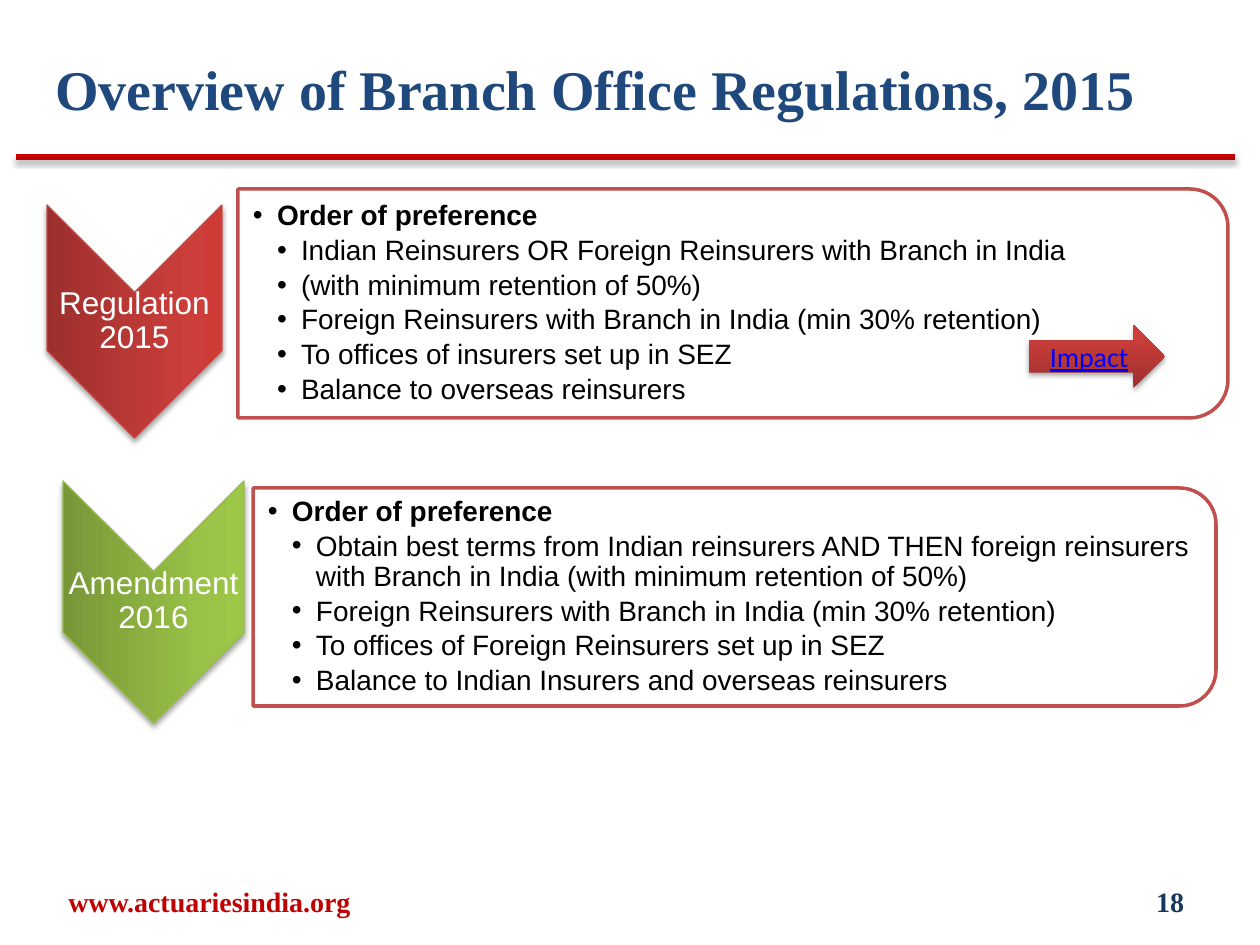
import copy

import pptx
import pptx.util
from lxml import etree
from pptx.dml.color import RGBColor
from pptx.enum.shapes import MSO_CONNECTOR, MSO_SHAPE
from pptx.enum.text import MSO_ANCHOR, PP_ALIGN
from pptx.oxml.ns import qn

PX = 914400 // 126
COLORS = {
    "title": "1F497D", "accent": "C00000", "number": "17375E",
    "panel_line": "C0504D", "white": "FFFFFF", "black": "000000", "link": "0000FF",
}
RED = ("9C2F2D", "CB3E3A", "CE3B37")
GREEN = ("779737", "9BC348", "9DC746")
STOPS = (0, 0.8, 1)

TITLE = "Overview of Branch Office Regulations, 2015"
HEADING = "Order of preference"
# Boxes are left, top, width, height in px as seen after rotation.
SECTIONS = [
    {
        "label": "Regulation 2015", "gradient": RED, "edge": "BF4C48",
        "chevron": (47, 205, 175, 233), "panel": (238, 189, 990, 229),
        "items": [
            "Indian Reinsurers OR Foreign Reinsurers with Branch in India",
            "(with minimum retention of 50%)",
            "Foreign Reinsurers with Branch in India (min 30% retention)",
            "To offices of insurers set up in SEZ",
            "Balance to overseas reinsurers",
        ],
    },
    {
        "label": "Amendment 2016", "gradient": GREEN, "edge": "98B955",
        "chevron": (63, 481, 181, 242), "panel": (253, 488, 963, 218),
        "items": [
            "Obtain best terms from Indian reinsurers AND THEN foreign reinsurers "
            "with Branch in India (with minimum retention of 50%)",
            "Foreign Reinsurers with Branch in India (min 30% retention)",
            "To offices of Foreign Reinsurers set up in SEZ",
            "Balance to Indian Insurers and overseas reinsurers",
        ],
    },
]
FOOTERS = [
    ("www.actuariesindia.org", (10, 876, 399, 50), "accent", PP_ALIGN.CENTER),
    ("18", (903, 876, 294, 50), "number", PP_ALIGN.RIGHT),
]
PANEL_INSET = 11
BULLET_INDENT = 24


def emu(box):
    return [value * PX for value in box]


def rgb(name):
    return RGBColor.from_string(COLORS.get(name, name))


def write(paragraph, text, *, size, font, color, bold=False, underline=False,
          align=PP_ALIGN.LEFT, line_spacing=None, space_after=0, level=0):
    """Fill a paragraph; a level above 0 gives it a hanging bullet."""
    if level:
        properties = paragraph._p.get_or_add_pPr()
        properties.set("marL", str(level * BULLET_INDENT * PX))
        properties.set("indent", str(-BULLET_INDENT * PX))
        etree.SubElement(properties, qn("a:buFont"), typeface="Arial")
        etree.SubElement(properties, qn("a:buChar"), char="•")
        paragraph.level = level - 1
    paragraph.alignment = align
    paragraph.line_spacing = line_spacing
    paragraph.space_before = pptx.util.Pt(0)
    paragraph.space_after = pptx.util.Pt(space_after)
    run = paragraph.add_run()
    run.text = text
    run.font.size = pptx.util.Pt(size)
    run.font.name = font
    run.font.bold = bold
    run.font.underline = underline
    run.font.color.rgb = rgb(color)


def set_frame(shape, anchor=MSO_ANCHOR.MIDDLE, insets=(13, 6, 13, 6)):
    frame = shape.text_frame
    frame.word_wrap = True
    frame.vertical_anchor = anchor
    (frame.margin_left, frame.margin_top,
     frame.margin_right, frame.margin_bottom) = emu(insets)
    return frame


def add_shadow(shape, alpha):
    effects = etree.SubElement(shape._element.spPr, qn("a:effectLst"))
    shadow = etree.SubElement(effects, qn("a:outerShdw"), blurRad="39370",
                              dist="22860", dir="5400000", rotWithShape="0")
    color = etree.SubElement(shadow, qn("a:srgbClr"), val=COLORS["black"])
    etree.SubElement(color, qn("a:alpha"), val=str(alpha * 1000))


def fill_gradient(shape, colors):
    shape.fill.gradient()
    shape.fill.gradient_angle = 90
    stops = shape._element.spPr.find(".//" + qn("a:gsLst"))
    stops.insert(1, copy.deepcopy(stops[0]))
    for stop, position, color in zip(shape.fill.gradient_stops, STOPS, colors):
        stop.position = position
        stop.color.rgb = rgb(color)


def add_turned(shapes, kind, box, color, width):
    """Add a preset turned by 90 degrees so that it covers the box."""
    left, top, seen_width, seen_height = box
    shift = (seen_width - seen_height) / 2
    frame = (left + shift, top - shift, seen_height, seen_width)
    shape = shapes.add_shape(kind, *[int(value) for value in emu(frame)])
    shape.rotation = 90
    shape.line.color.rgb = rgb(color)
    shape.line.width = pptx.util.Pt(width)
    return shape


def add_section(slide, section):
    shapes = slide.shapes.add_group_shape().shapes
    left, top, width, height = section["chevron"]
    chevron = add_turned(shapes, MSO_SHAPE.CHEVRON, section["chevron"], section["edge"], 0.75)
    fill_gradient(chevron, section["gradient"])
    add_shadow(chevron, 35)
    label = shapes.add_textbox(*emu((left, top + width // 2, width, height - width)))
    write(set_frame(label, insets=(1, 1, 1, 1)).paragraphs[0], section["label"], size=18,
          font="Arial", color="white", align=PP_ALIGN.CENTER, line_spacing=0.9)

    left, top, width, height = section["panel"]
    panel = add_turned(shapes, MSO_SHAPE.ROUND_2_SAME_RECTANGLE, section["panel"],
                       "panel_line", 2)
    panel.shadow.inherit = False
    panel.fill.solid()
    panel.fill.fore_color.rgb = rgb("white")
    fill_color = panel._element.spPr.find(qn("a:solidFill"))[0]
    etree.SubElement(fill_color, qn("a:alpha"), val="90000")
    body = shapes.add_textbox(*emu((left, top + PANEL_INSET, width - PANEL_INSET,
                                    height - 2 * PANEL_INSET)))
    frame = set_frame(body, insets=(15, 1, 1, 1))
    for index, text in enumerate([HEADING] + section["items"]):
        paragraph = frame.add_paragraph() if index else frame.paragraphs[0]
        write(paragraph, text, size=16, font="Arial", color="black", bold=index == 0,
              line_spacing=0.9, space_after=2.6, level=2 if index else 1)


def main():
    presentation = pptx.Presentation()
    presentation.slide_width, presentation.slide_height = emu((1260, 945))
    slide = presentation.slides.add_slide(presentation.slide_layouts[5])

    rule = slide.shapes.add_connector(MSO_CONNECTOR.STRAIGHT, *emu((16, 157, 1235, 157)))
    rule.line.color.rgb = rgb("accent")
    rule.line.width = pptx.util.Pt(3)
    add_shadow(rule, 38)

    title = slide.shapes.title
    title.left, title.top, title.width, title.height = emu((42, 42, 1124, 84))
    frame = set_frame(title, MSO_ANCHOR.TOP, insets=(13, 12, 13, 6))
    write(frame.paragraphs[0], TITLE, size=32, font="Times New Roman",
          color="title", bold=True)

    for text, box, color, align in FOOTERS:
        footer = slide.shapes.add_textbox(*emu(box))
        write(set_frame(footer).paragraphs[0], text, size=16, font="Times New Roman",
              color=color, bold=True, align=align)

    for section in SECTIONS:
        add_section(slide, section)

    arrow = slide.shapes.add_shape(MSO_SHAPE.RIGHT_ARROW, *emu((1029, 325, 136, 63)))
    fill_gradient(arrow, RED)
    arrow.line.fill.background()
    add_shadow(arrow, 35)
    write(set_frame(arrow).paragraphs[0], "Impact", size=16, font="Calibri",
          color="link", underline=True, align=PP_ALIGN.CENTER)

    presentation.save("out.pptx")


if __name__ == "__main__":
    main()
